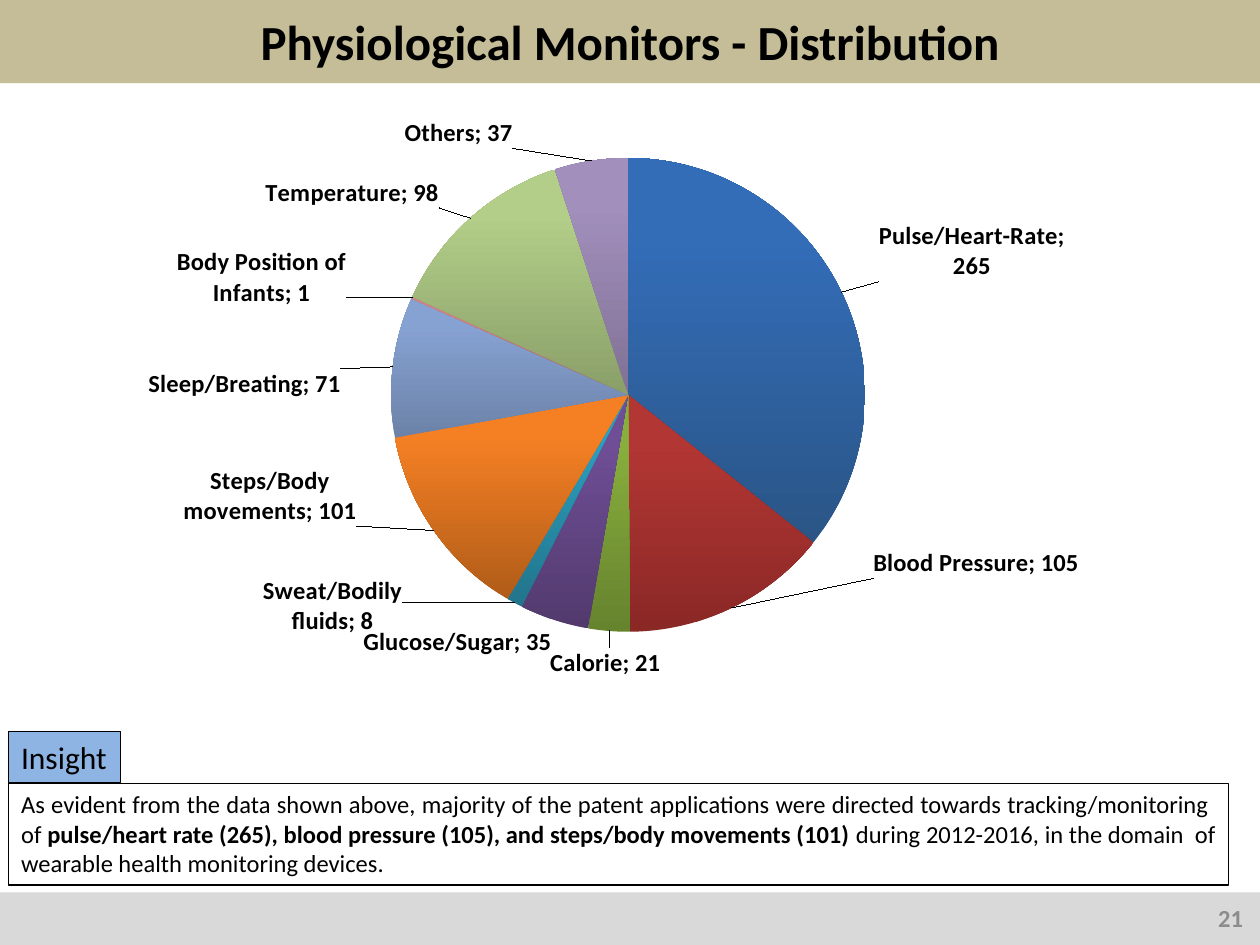
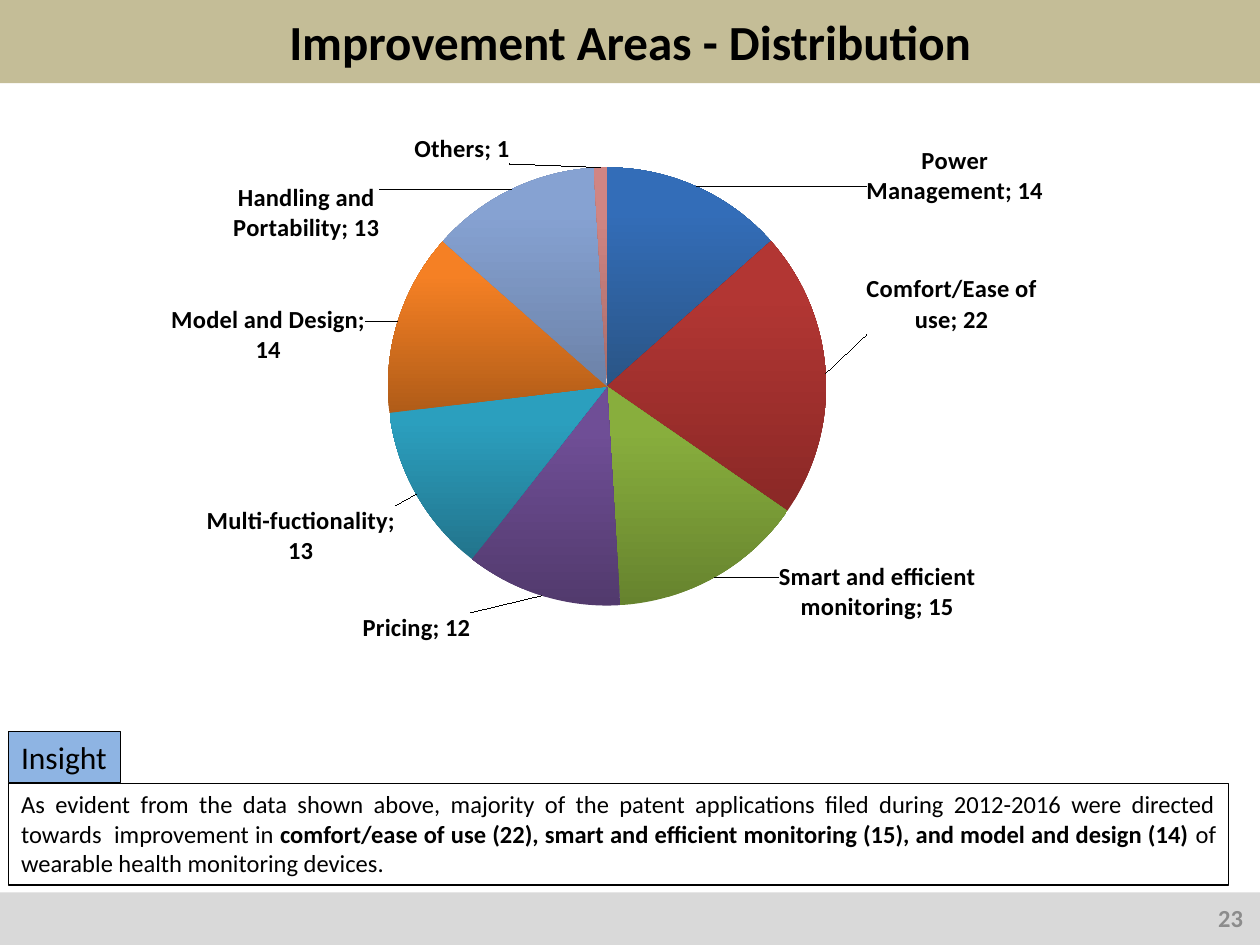
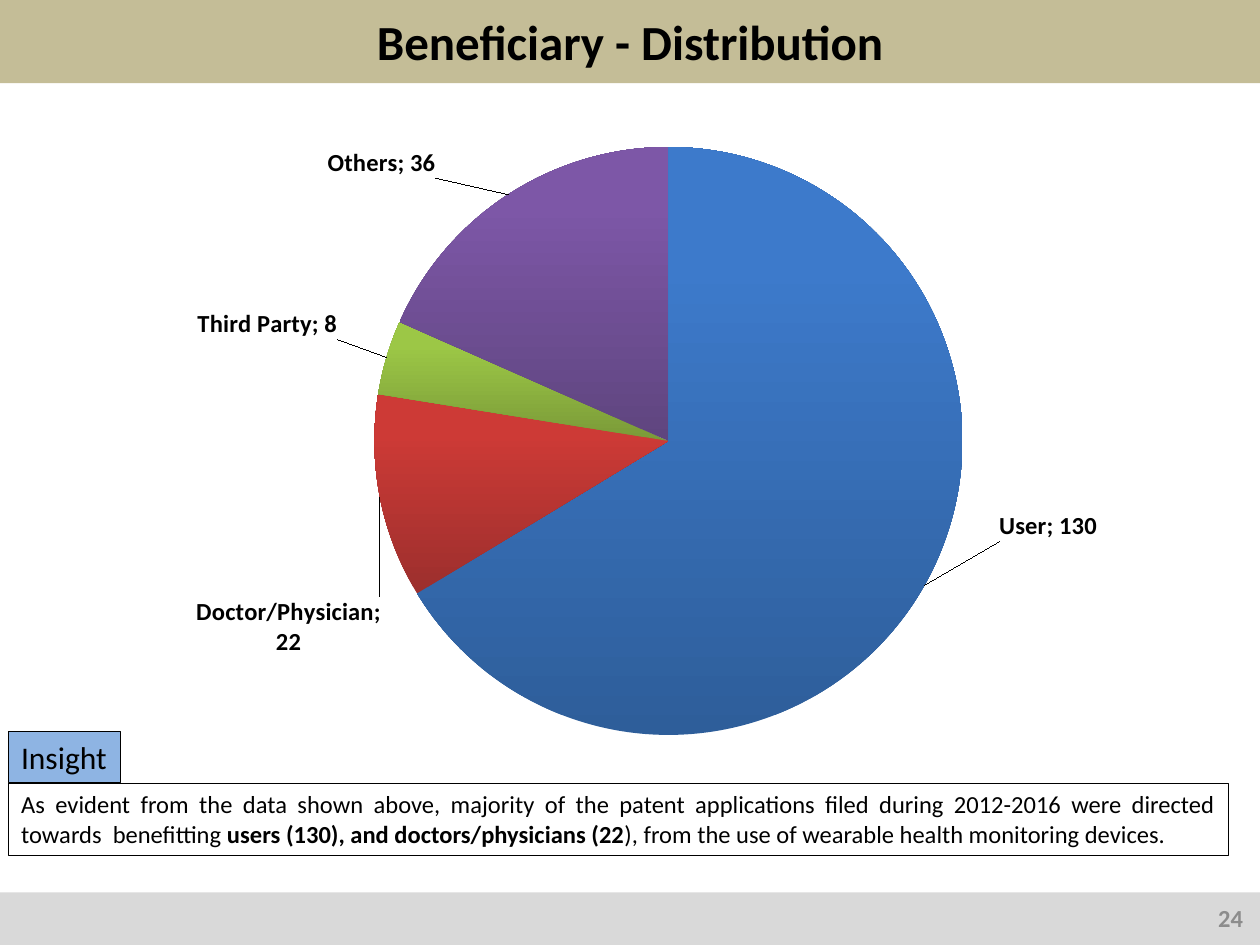
from math import cos, radians, sin

from pptx import Presentation
from pptx.chart.data import CategoryChartData
from pptx.dml.color import RGBColor
from pptx.enum.chart import XL_CHART_TYPE as CHART
from pptx.enum.shapes import MSO_SHAPE as SHAPE
from pptx.enum.text import MSO_ANCHOR as ANCHOR, MSO_AUTO_SIZE as AUTO, PP_ALIGN as ALIGN
from pptx.oxml import parse_xml
from pptx.oxml.ns import nsdecls, qn
from pptx.util import Pt

# Shared look
FONT = "Calibri"
BLACK, TITLE_BAND, FOOTER_BAND = "000000", "C4BD97", "D9D9D9"
TAG_FILL, NUMBER_GREY = "8EB4E3", "8C8C8C"
TITLE_BOX = (0, -0.7, 720, 48.2)
FOOTER_BOX = (0, 510, 720, 30)
NUMBER_BOX = (549.4, 510, 168, 28.8)
TAG_BOX = (5, 418, 64, 29.1)
LABEL_GAP = 4

# Slice gradients: (bottom, top)
SLICES = [
    ("2A5586", "336DB8"), ("8A2826", "B23633"), ("66832E", "88AE3D"),
    ("523A6D", "6F4E96"), ("22748C", "2B9FBE"), ("B05C18", "F58024"),
    ("6C82A8", "86A2D2"), ("A86C6A", "D08583"), ("8A9F69", "B2CE88"),
    ("807195", "A28FBC"),
]
BRIGHT_SLICES = [
    ("2E5E9A", "3D7ACB"), ("9C2F2D", "CD3A36"),
    ("7A9A38", "9CC746"), ("5F457F", "7D57A7"),
]

# Content; pie is centre x, centre y, radius; each slice has name, value and
# the point where its label faces the pie (None: automatic place)
SLIDES = [
    dict(
        title="Physiological Monitors - Distribution", number="21",
        chart=(59, 60, 588, 342), pie=(358.9, 225.7, 135.4), colors=SLICES,
        data=[
            ("Pulse/Heart-Rate", 265, (502, 161)),
            ("Blood Pressure", 105, (499, 313)),
            ("Calorie", 21, (346, 370)),
            ("Glucose/Sugar", 35, None),
            ("Sweat/Bodily fluids", 8, (230, 329)),
            ("Steps/Body movements", 101, (204, 266)),
            ("Sleep/Breating", 71, (195, 228)),
            ("Body Position of Infants", 1, (198, 176)),
            ("Temperature", 98, (251, 119)),
            ("Others", 37, (293, 85)),
        ],
        insight_height=58.2,
        insight=[
            ("As evident from the data shown above, majority of the patent applications "
             "were directed towards tracking/monitoring  of ", False),
            ("pulse/heart rate (265), blood pressure (105), and steps/body movements (101)",
             True),
            (" during 2012-2016, in the domain  of wearable health monitoring devices.", False),
        ],
    ),
    dict(
        title="Improvement Areas - Distribution", number="23",
        chart=(54, 54, 576, 348), pie=(346.9, 220.9, 125.2), colors=SLICES,
        data=[
            ("Power Management", 14, (495, 118)),
            ("Comfort/Ease of use", 22, (495, 174)),
            ("Smart and efficient monitoring", 15, (445, 321)),
            ("Pricing", 12, (269, 350)),
            ("Multi-fuctionality", 13, (226, 289)),
            ("Model and Design", 14, (209, 209)),
            ("Handling and Portability", 13, (217, 139)),
            ("Others", 1, (264, 94)),
        ],
        insight_height=58.2,
        insight=[
            ("As evident from the data shown above, majority of the patent applications "
             "filed during 2012-2016 were directed towards  improvement in ", False),
            ("comfort/ease of use (22), smart and efficient monitoring (15), "
             "and model and design (14) ", True),
            ("of wearable health monitoring devices.", False),
        ],
    ),
    dict(
        title="Beneficiary - Distribution", number="24",
        chart=(78, 66, 549, 364), pie=(382, 252, 168), colors=BRIGHT_SLICES,
        data=[
            ("User", 130, (571, 292)),
            ("Doctor/Physician", 22, (218, 341)),
            ("Third Party", 8, (193, 194)),
            ("Others", 36, (249, 102)),
        ],
        insight_height=41.2,
        insight=[
            ("As evident from the data shown above, majority of the patent applications "
             "filed during 2012-2016 were directed towards  benefitting ", False),
            ("users (130), and doctors/physicians (22", True),
            ("), from the use of wearable health monitoring devices.", False),
        ],
    ),
]


def rgb(color):
    return RGBColor.from_string(color)


def pts(box):
    return [Pt(v) for v in box]


def put(obj, **values):
    for name, value in values.items():
        setattr(obj, name, value)


def write(sp, runs, size, color=BLACK, align=ALIGN.LEFT, **frame):
    """Fill one paragraph with (text, bold) runs."""
    tf = sp.text_frame
    put(tf, **{"word_wrap": True, **frame})
    p = tf.paragraphs[0]
    p.alignment = align
    for text, bold in runs:
        r = p.add_run()
        r.text = text
        put(r.font, name=FONT, size=Pt(size), bold=bold)
        r.font.color.rgb = rgb(color)


def box(shapes, kind, place, fill=None, line=None):
    sp = shapes.add_shape(kind, *pts(place))
    sp.shadow.inherit = False
    if fill:
        sp.fill.solid()
        sp.fill.fore_color.rgb = rgb(fill)
    else:
        sp.fill.background()
    if line:
        sp.line.color.rgb = rgb(line)
        sp.line.width = Pt(0.75)
    else:
        sp.line.fill.background()
    return sp


# Pie labels
TEXT_XML = (
    '<c:txPr><a:bodyPr wrap="square"/><a:p><a:pPr><a:defRPr sz="1400" b="1">'
    f'<a:solidFill><a:srgbClr val="{BLACK}"/></a:solidFill><a:latin typeface="{FONT}"/>'
    '</a:defRPr></a:pPr><a:endParaRPr lang="en-US"/></a:p></c:txPr>'
)
SHOW_XML = '<c:dLblPos val="bestFit"/>' + "".join(
    f'<c:show{name} val="{on}"/>'
    for name, on in [("LegendKey", 0), ("Val", 1), ("CatName", 1),
                     ("SerName", 0), ("Percent", 0), ("BubbleSize", 0)]
)


def labels_xml(data, pie, size):
    """Labels are shifted from the pie's edge to their points."""
    cx, cy, radius = pie
    total = sum(value for _, value, _ in data)
    done, parts = 0, []
    for i, (_, value, target) in enumerate(data):
        angle = radians(360 * (done + value / 2) / total)
        done += value
        if target:
            edge = radius + LABEL_GAP
            dx = (target[0] - cx - edge * sin(angle)) / size[0]
            dy = (target[1] - cy + edge * cos(angle)) / size[1]
            parts.append(
                f'<c:dLbl><c:idx val="{i}"/><c:layout><c:manualLayout>'
                f'<c:x val="{dx:.4f}"/><c:y val="{dy:.4f}"/></c:manualLayout></c:layout>'
                f'{TEXT_XML}{SHOW_XML}</c:dLbl>'
            )
    return (f'<c:dLbls {nsdecls("c", "a")}>{"".join(parts)}{TEXT_XML}{SHOW_XML}'
            '<c:showLeaderLines val="1"/></c:dLbls>')


def plot_xml(pie, place):
    (cx, cy, radius), (x, y, w, h) = pie, place
    spots = dict(x=(cx - radius - x) / w, y=(cy - radius - y) / h,
                 w=2 * radius / w, h=2 * radius / h)
    return (f'<c:layout {nsdecls("c")}><c:manualLayout><c:layoutTarget val="inner"/>'
            '<c:xMode val="edge"/><c:yMode val="edge"/>'
            + "".join(f'<c:{k} val="{v:.4f}"/>' for k, v in spots.items())
            + '</c:manualLayout></c:layout>')


def add_pie(s, place, pie, colors, data):
    cd = CategoryChartData()
    cd.categories = [name for name, _, _ in data]
    cd.add_series("Series 1", [value for _, value, _ in data])
    chart = s.shapes.add_chart(CHART.PIE, *pts(place), cd).chart
    put(chart, has_title=False, has_legend=False)
    put(chart.font, name=FONT, size=Pt(10))
    chart.font.color.rgb = rgb(BLACK)
    plot = chart.plots[0]
    plot.vary_by_categories = True
    series = plot.series[0]
    for i, shades in enumerate(colors[:len(data)]):
        fmt = series.points[i].format
        fmt.line.fill.background()
        fmt.fill.gradient()
        fmt.fill.gradient_angle = 90
        for stop, shade, at in zip(fmt.fill.gradient_stops, shades, (0, 0.8)):
            stop.color.rgb = rgb(shade)
            stop.position = at
    ser = series._element
    ser.find(qn("c:cat")).addprevious(parse_xml(labels_xml(data, pie, place[2:])))
    area = ser.getparent().getparent()
    for old in area.findall(qn("c:layout")):
        area.remove(old)
    area.insert(0, parse_xml(plot_xml(pie, place)))


def add_insight(s, runs, height):
    group = s.shapes.add_group_shape().shapes
    tag = box(group, SHAPE.RECTANGLE, TAG_BOX, TAG_FILL, BLACK)
    write(tag, [("Insight", False)], 18, word_wrap=False,
          vertical_anchor=ANCHOR.TOP, auto_size=AUTO.SHAPE_TO_FIT_TEXT)
    note = box(group, SHAPE.RECTANGLE, (5, 447.6, 697, height), line=BLACK)
    write(note, runs, 14, align=ALIGN.JUSTIFY,
          vertical_anchor=ANCHOR.TOP, auto_size=AUTO.SHAPE_TO_FIT_TEXT)


def add_frame(s, title, number):
    """Title band, footer band and slide number."""
    band = box(s.shapes, SHAPE.ROUNDED_RECTANGLE, FOOTER_BOX, FOOTER_BAND)
    band.adjustments[0] = 0
    sp = s.shapes.title
    put(sp, **dict(zip(("left", "top", "width", "height"), pts(TITLE_BOX))))
    sp.fill.solid()
    sp.fill.fore_color.rgb = rgb(TITLE_BAND)
    write(sp, [(title, True)], 28, align=ALIGN.CENTER, vertical_anchor=ANCHOR.MIDDLE)
    num = s.shapes.add_textbox(*pts(NUMBER_BOX))
    write(num, [(number, True)], 14, NUMBER_GREY, ALIGN.RIGHT, vertical_anchor=ANCHOR.MIDDLE)


def main():
    prs = Presentation()
    put(prs, slide_width=Pt(720), slide_height=Pt(540))
    for page in SLIDES:
        s = prs.slides.add_slide(prs.slide_layouts[5])
        add_frame(s, page["title"], page["number"])
        add_pie(s, page["chart"], page["pie"], page["colors"], page["data"])
        add_insight(s, page["insight"], page["insight_height"])
    prs.save("out.pptx")


if __name__ == "__main__":
    main()
